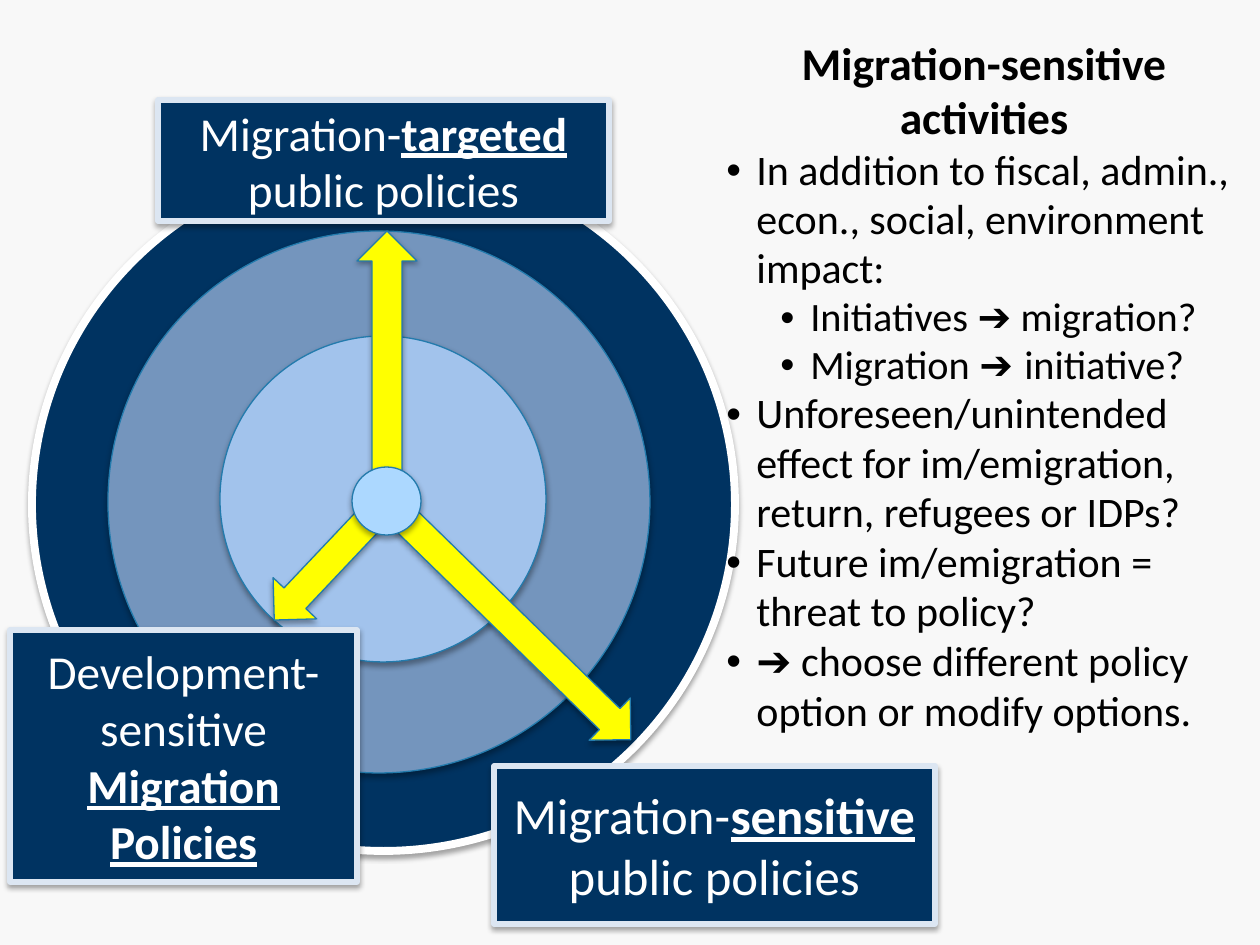
from dataclasses import dataclass

import pptx
import pptx.dml.color
import pptx.enum.shapes
import pptx.enum.text
import pptx.oxml.ns
import pptx.util
from lxml import etree

PX = 914400 / 126  # EMU in one px
FONT = "Calibri"
SYMBOL_FONT = "Arial"
ARROW = "➔"
COLORS = {
    "background": "F8F8F8", "navy": "003361", "steel": "7495BD",
    "sky": "A2C3EC", "hub": "ACD8FF", "yellow": "FFFF00",
    "edge": "237BAD", "frame": "DCE6F2", "white": "FFFFFF", "black": "000000",
}
SHAPE = pptx.enum.shapes.MSO_SHAPE
ALIGN = pptx.enum.text.PP_ALIGN
ANCHOR = pptx.enum.text.MSO_ANCHOR


@dataclass(frozen=True)
class Figure:
    left: int
    top: int
    width: int
    height: int
    fill: str
    kind: SHAPE = SHAPE.OVAL
    line: str = "edge"
    line_pt: float = 0.75
    rotation: float = 0


@dataclass(frozen=True)
class Span:
    text: str
    strong: bool = False
    font: str = FONT


@dataclass(frozen=True)
class Label:
    left: int
    top: int
    width: int
    height: int
    size: int
    spans: tuple[Span, ...]
    inset: bool = True


@dataclass(frozen=True)
class Line:
    spans: tuple[Span, ...]
    size: int = 24
    indent: int = 30
    level: int = 0


RINGS = (
    Figure(32, 158, 703, 693, "navy", line="white", line_pt=4.5),
    Figure(108, 231, 542, 542, "steel"),
    Figure(220, 336, 326, 326, "sky"),
)
HUB = Figure(352, 467, 69, 68, "hub")
ARROWS = tuple(
    Figure(*place, "yellow", SHAPE.RIGHT_ARROW, rotation=angle)
    for place, angle in (
        ((328, 587, 353, 59), 44.3),
        ((248, 529, 168, 60), 133.4),
        ((253, 335, 268, 60), 270),
    )
)
LABELS = (
    Label(10, 630, 347, 252, 27,
          (Span("Development-sensitive "), Span("Migration Policies", True))),
    Label(494, 766, 441, 158, 29,
          (Span("Migration-"), Span("sensitive", True), Span(" public policies")), False),
    Label(158, 100, 451, 121, 27,
          (Span("Migration-"), Span("targeted", True), Span(" public policies"))),
)
HEADING = Span("Migration-sensitive activities", True)
BULLETS = (
    Line((Span("In addition to fiscal, admin., econ., social, environment impact:"),)),
    Line((Span("Initiatives "), Span(ARROW, font=SYMBOL_FONT), Span(" migration?")), 23, 84, 1),
    Line((Span("Migration "), Span(ARROW + " ", font=SYMBOL_FONT), Span("initiative?")), 23, 84, 1),
    Line((Span("Unforeseen/unintended effect for im/emigration, return, refugees or IDPs?"),)),
    Line((Span("Future im/emigration = threat to policy?"),)),
    Line((Span(ARROW, font=SYMBOL_FONT),
          Span(" choose different policy option or modify options."))),
)


def px(value: float) -> pptx.util.Emu:
    return pptx.util.Emu(round(value * PX))


def color(name: str) -> pptx.dml.color.RGBColor:
    return pptx.dml.color.RGBColor.from_string(COLORS[name])


def add_element(parent, tag: str, **attributes: str):
    element = etree.SubElement(parent, pptx.oxml.ns.qn(tag))
    for key, value in attributes.items():
        element.set(key, value)
    return element


def add_shadow(shape) -> None:
    shape.shadow.inherit = False
    effects = shape._element.spPr.find(pptx.oxml.ns.qn("a:effectLst"))
    shadow = add_element(effects, "a:outerShdw", blurRad="40000", dist="23000",
                         dir="5400000", rotWithShape="0")
    tint = add_element(shadow, "a:srgbClr", val=COLORS["black"])
    add_element(tint, "a:alpha", val="35000")


def draw_figure(page, figure: Figure):
    shape = page.shapes.add_shape(figure.kind, px(figure.left), px(figure.top),
                                  px(figure.width), px(figure.height))
    shape.rotation = figure.rotation
    shape.fill.solid()
    shape.fill.fore_color.rgb = color(figure.fill)
    shape.line.color.rgb = color(figure.line)
    shape.line.width = pptx.util.Pt(figure.line_pt)
    add_shadow(shape)
    return shape


def add_span(para, span: Span, size: int, tone: str, underline: bool = False) -> None:
    run = para.add_run()
    run.text = span.text
    run.font.name = span.font
    run.font.size = pptx.util.Pt(size)
    run.font.color.rgb = color(tone)
    run.font.bold = span.strong
    run.font.underline = underline


def draw_label(page, label: Label) -> None:
    box = draw_figure(page, Figure(label.left, label.top, label.width, label.height,
                                   "navy", SHAPE.RECTANGLE, "frame", 3))
    frame = box.text_frame
    frame.word_wrap = True
    frame.vertical_anchor = ANCHOR.MIDDLE
    if not label.inset:
        frame.margin_left = frame.margin_right = 0
        frame.margin_top = frame.margin_bottom = 0
    para = frame.paragraphs[0]
    para.alignment = ALIGN.CENTER
    for span in label.spans:
        add_span(para, span, label.size, "white", span.strong)


def space(para) -> None:
    para.space_before = pptx.util.Pt(0.2)
    para.line_spacing = 0.98


def draw_activities(page) -> None:
    box = page.shapes.add_textbox(px(714), px(32), px(536), px(861))
    frame = box.text_frame
    frame.word_wrap = True
    frame.margin_right = px(8)
    title = frame.paragraphs[0]
    title.alignment = ALIGN.CENTER
    space(title)
    add_span(title, HEADING, 26, "black")
    for line in BULLETS:
        para = frame.add_paragraph()
        para.level = line.level
        space(para)
        properties = para._p.get_or_add_pPr()
        properties.set("marL", str(px(line.indent)))
        properties.set("indent", str(px(-30)))
        add_element(properties, "a:buFont", typeface=SYMBOL_FONT)
        add_element(properties, "a:buChar", char="•")
        for span in line.spans:
            add_span(para, span, line.size, "black")


def main() -> None:
    deck = pptx.Presentation()
    deck.slide_width, deck.slide_height = px(1260), px(945)
    page = deck.slides.add_slide(deck.slide_layouts[6])
    page.background.fill.solid()
    page.background.fill.fore_color.rgb = color("background")

    # Concentric rings and their labels
    for ring in RINGS:
        draw_figure(page, ring)
    for label in LABELS:
        draw_label(page, label)

    # Arrows leaving the hub
    for figure in (*ARROWS, HUB):
        draw_figure(page, figure)

    # Activities list on the right
    draw_activities(page)
    deck.save("out.pptx")


if __name__ == "__main__":
    main()
